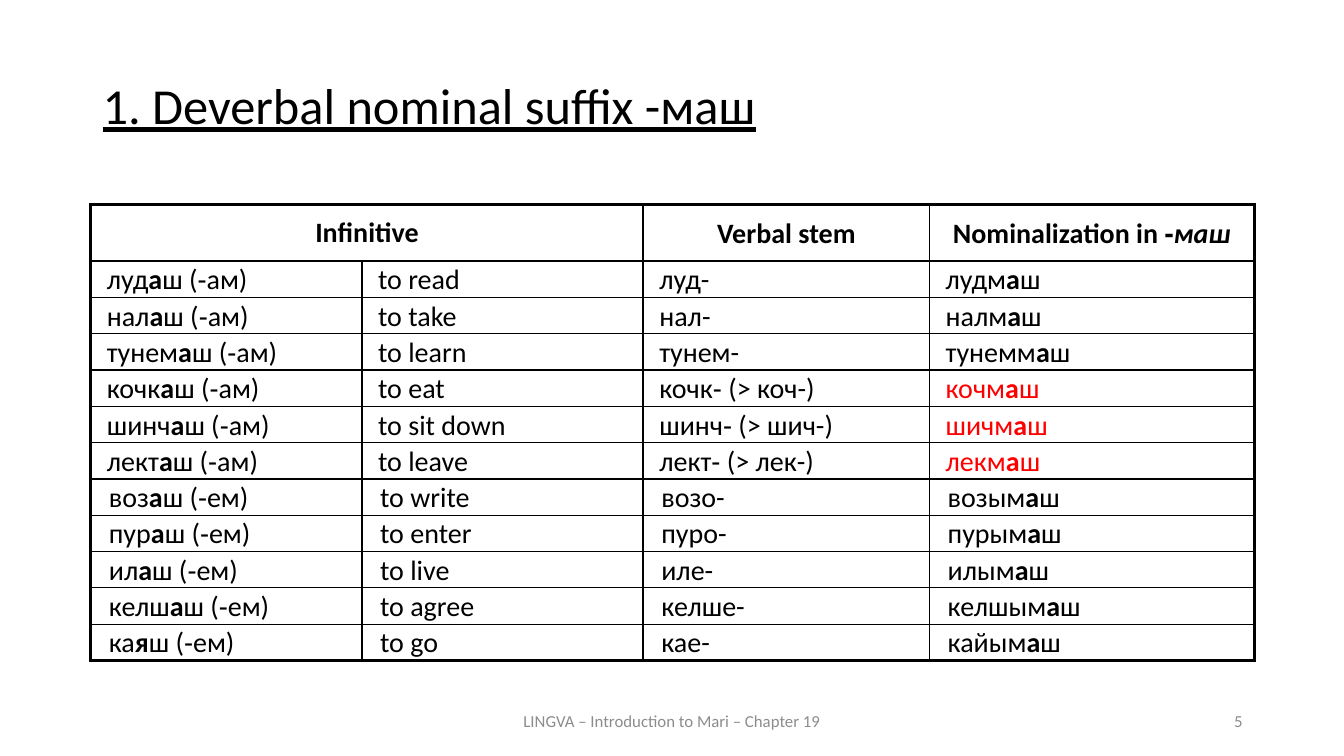
from pptx import Presentation
from pptx import util as u
from pptx.dml.color import RGBColor
from pptx.enum import text
from pptx.oxml.ns import qn
from lxml import etree

WIDTH, HEIGHT = 13.33, 7.5
BLACK, RED, GREY = "000000", "FF0000", "8C8C8C"
ALIGN, ANCHOR = text.PP_ALIGN, text.MSO_ANCHOR

# Table grid: column widths, row heights and rule weights
COLUMNS = [2.69, 2.79, 2.84, 3.22]
HEADER_HEIGHT, ROW_HEIGHT = 0.56, 0.36
VERTICAL_RULES = [2.25, 1, 1.5, 1.5, 2.25]
HEADER_RULES = [2.25, 1.5, 1.5, 1.5, 2.25]
THIN, THICK = 1, 2.25

# Infinitive stem, meaning, verbal stem, nominal stem, colour of the nominal
FIRST_CONJUGATION = [
    ("луд", "to read", "луд-", "луд", BLACK),
    ("нал", "to take", "нал-", "нал", BLACK),
    ("тунем", "to learn", "тунем-", "тунем", BLACK),
    ("кочк", "to eat", "кочк\u2011 (> коч-)", "коч", RED),
    ("шинч", "to sit down", "шинч\u2011 (> шич-)", "шич", RED),
    ("лект", "to leave", "лект\u2011 (> лек-)", "лек", RED),
]
SECOND_CONJUGATION = [
    ("воз", "to write", "возо-", "возы", BLACK),
    ("пур", "to enter", "пуро-", "пуры", BLACK),
    ("ил", "to live", "иле-", "илы", BLACK),
    ("келш", "to agree", "келше-", "келшы", BLACK),
    ("ка", "to go", "кае-", "кайы", BLACK),
]
# Verbs, infinitive ending, side inset of the cells
GROUPS = [(FIRST_CONJUGATION, "ам", 0.16), (SECOND_CONJUGATION, "ем", 0.18)]


def color(hex_string):
    return RGBColor.from_string(hex_string)


def style(paragraph, size, hex_string, align):
    paragraph.alignment = align
    paragraph.font.name = "Calibri"
    paragraph.font.size = u.Pt(size)
    paragraph.font.color.rgb = color(hex_string)


def add_label(slide, box, words, size, hex_string, align, anchor=ANCHOR.MIDDLE):
    """Text box placed by shares of the slide's size."""
    left, top, width, height = box
    shape = slide.shapes.add_textbox(
        u.Inches(left * WIDTH), u.Inches(top * HEIGHT),
        u.Inches(width * WIDTH), u.Inches(height * HEIGHT))
    frame = shape.text_frame
    frame.word_wrap = True
    frame.vertical_anchor = anchor
    paragraph = frame.paragraphs[0]
    paragraph.text = words
    style(paragraph, size, hex_string, align)
    return paragraph


def set_borders(cell, left, right, top, bottom):
    properties = cell._tc.get_or_add_tcPr()
    for side, weight in zip("LRTB", (left, right, top, bottom)):
        line = etree.SubElement(properties, qn(f"a:ln{side}"), w=str(u.Pt(weight)))
        fill = etree.SubElement(line, qn("a:solidFill"))
        etree.SubElement(fill, qn("a:srgbClr"), val=BLACK)


def fill_cell(cell, pieces, hex_string, align, insets, anchor=ANCHOR.TOP):
    """Pieces are (words, bold, italic)."""
    cell.fill.background()
    cell.vertical_anchor = anchor
    side, top, bottom = insets
    cell.margin_left = cell.margin_right = u.Inches(side)
    cell.margin_top, cell.margin_bottom = u.Inches(top), u.Inches(bottom)
    paragraph = cell.text_frame.paragraphs[0]
    style(paragraph, 20, hex_string, align)
    for words, bold, italic in pieces:
        run = paragraph.add_run()
        run.text = words
        run.font.name = "Calibri"
        run.font.size = u.Pt(20)
        run.font.color.rgb = color(hex_string)
        run.font.bold, run.font.italic = bold, italic


def plain(words):
    return [(words, False, False)]


def stressed(start, vowel, end):
    return [(start, False, False), (vowel, True, False), (end, False, False)]


def fill_header(table):
    tight = (0.16, 0.02, 0)
    headings = [
        (0, [("Infinitive", True, False)], (0.22, 0.11, 0.11)),
        (2, [("Verbal stem", True, False)], tight),
        (3, [("Nominalization in \u2011", True, False), ("маш", True, True)], tight),
    ]
    for column, pieces, insets in headings:
        fill_cell(table.cell(0, column), pieces, BLACK, ALIGN.CENTER, insets, ANCHOR.MIDDLE)
    table.cell(0, 0).merge(table.cell(0, 1))


def fill_verbs(table):
    row = 1
    for verbs, ending, side in GROUPS:
        for stem, meaning, verbal_stem, nominal, nominal_color in verbs:
            vowel = "я" if stem == "ка" else "а"
            entries = [
                (stressed(stem, vowel, f"ш (\u2011{ending})"), BLACK),
                (plain(meaning), BLACK),
                (plain(verbal_stem), BLACK),
                (stressed(nominal + "м", "а", "ш"), nominal_color),
            ]
            for column, (pieces, hex_string) in enumerate(entries):
                fill_cell(table.cell(row, column), pieces, hex_string,
                          ALIGN.JUSTIFY, (side, 0.02, 0))
            row += 1


def add_verb_table(slide):
    verb_count = len(FIRST_CONJUGATION) + len(SECOND_CONJUGATION)
    heights = [HEADER_HEIGHT] + [ROW_HEIGHT] * verb_count
    table = slide.shapes.add_table(
        len(heights), len(COLUMNS), u.Inches(0.9), u.Inches(2.03),
        u.Inches(sum(COLUMNS)), u.Inches(sum(heights))).table
    table.first_row = table.horz_banding = False
    for column, width in zip(table.columns, COLUMNS):
        column.width = u.Inches(width)

    # Thick rules frame the header and each conjugation
    thick_rows = {0, 1, 1 + len(FIRST_CONJUGATION), len(heights)}
    horizontal = [THICK if i in thick_rows else THIN for i in range(len(heights) + 1)]
    for i, height in enumerate(heights):
        table.rows[i].height = u.Inches(height)
        vertical = VERTICAL_RULES if i else HEADER_RULES
        for j in range(len(COLUMNS)):
            set_borders(table.cell(i, j), vertical[j], vertical[j + 1],
                        horizontal[i], horizontal[i + 1])
    fill_header(table)
    fill_verbs(table)


def main():
    presentation = Presentation()
    presentation.slide_width = u.Inches(WIDTH)
    presentation.slide_height = u.Inches(HEIGHT)
    slide = presentation.slides.add_slide(presentation.slide_layouts[6])

    add_verb_table(slide)

    # Title
    title = add_label(slide, (0.069, 0.101, 0.863, 0.111),
                      "1. Deverbal nominal suffix -маш", 36, BLACK,
                      ALIGN.JUSTIFY, ANCHOR.TOP)
    title.font.underline = True
    title.line_spacing = 0.9
    title.space_before = u.Pt(12)

    # Footer and slide number
    add_label(slide, (0.331, 0.927, 0.338, 0.053),
              "LINGVA – Introduction to Mari – Chapter 19", 12, GREY, ALIGN.CENTER)
    add_label(slide, (0.707, 0.927, 0.225, 0.053), "5", 12, GREY, ALIGN.RIGHT)

    presentation.save("out.pptx")


main()
